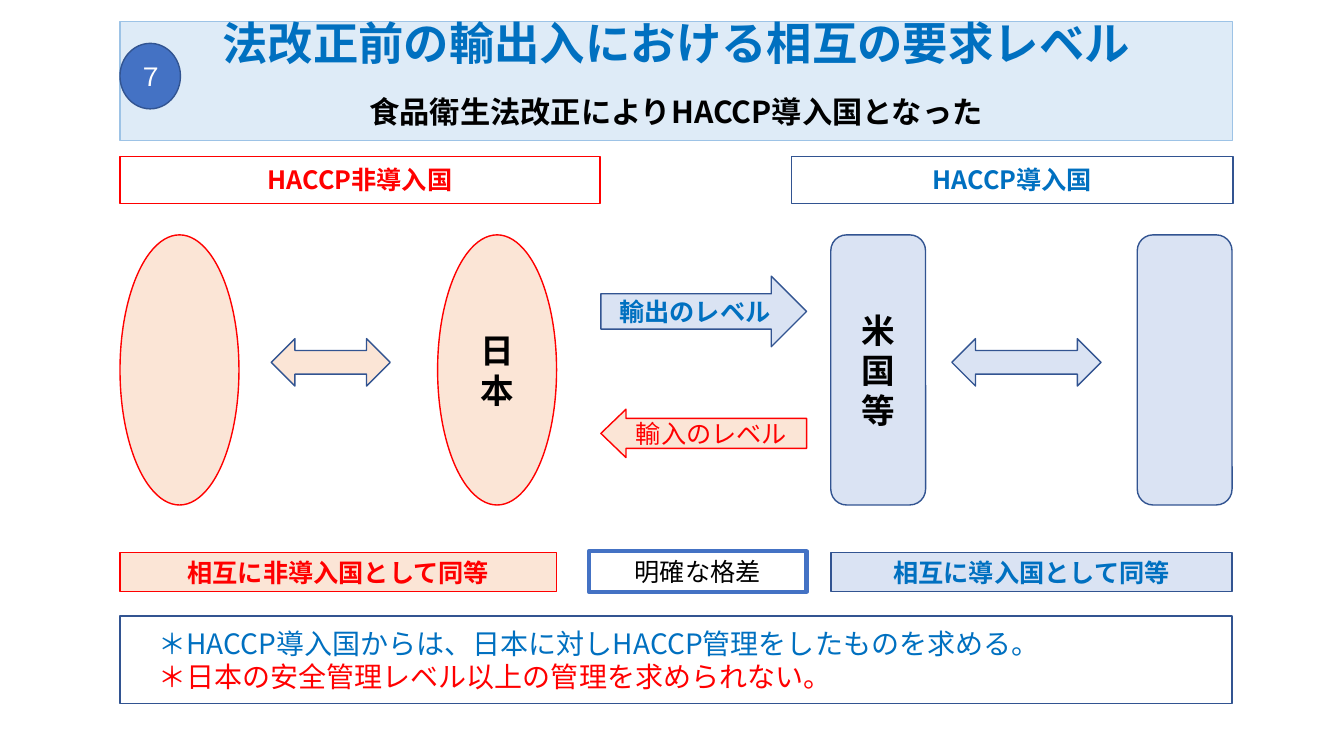
from lxml.etree import SubElement
from pptx import Presentation
from pptx.dml.color import RGBColor
from pptx.enum.shapes import MSO_SHAPE
from pptx.enum.text import MSO_ANCHOR, MSO_AUTO_SIZE, PP_ALIGN
from pptx.oxml.ns import qn
from pptx.util import Inches, Pt

FONT = "Noto Sans CJK JP"
RED = RGBColor(0xFF, 0x00, 0x00)
BLUE = RGBColor(0x00, 0x70, 0xC0)
NAVY = RGBColor(0x32, 0x54, 0x91)
ROYAL = RGBColor(0x44, 0x72, 0xC4)
SKY = RGBColor(0x9D, 0xC3, 0xE6)
PALE = RGBColor(0xDE, 0xEB, 0xF7)
ICE = RGBColor(0xDA, 0xE3, 0xF3)
PEACH = RGBColor(0xFB, 0xE5, 0xD6)
BLACK = RGBColor(0x00, 0x00, 0x00)
WHITE = RGBColor(0xFF, 0xFF, 0xFF)


def paint(shape, fill, line, width=1):
    """Set the fill and outline of a shape."""
    shape.fill.solid()
    shape.fill.fore_color.rgb = fill
    shape.line.color.rgb = line
    shape.line.width = Pt(width)


def write(shape, lines, align=PP_ALIGN.CENTER):
    """Write lines of (text, size, colour, bold), one paragraph each."""
    frame = shape.text_frame
    frame.word_wrap = True
    frame.auto_size = MSO_AUTO_SIZE.NONE
    frame.vertical_anchor = MSO_ANCHOR.MIDDLE
    frame.margin_top = frame.margin_bottom = 0
    for i, (text, size, color, bold) in enumerate(lines):
        para = frame.add_paragraph() if i else frame.paragraphs[0]
        para.alignment = align
        run = para.add_run()
        run.text = text
        font = run.font
        font.size, font.bold, font.name = Pt(size), bold, FONT
        font.color.rgb = color
        SubElement(run.font._element, qn("a:ea"), typeface=FONT)
    return frame


def draw(slide, kind, box, fill, line, lines=(), width=1):
    """Add a preset shape with centred text in a box."""
    shape = slide.shapes.add_shape(kind, *map(Inches, box))
    shape.shadow.inherit = False
    paint(shape, fill, line, width)
    if lines:
        write(shape, lines)
    return shape


def header(slide, x, y, w, h):
    """Place the title band and its number badge."""
    title = slide.shapes.title
    title.left, title.top, title.width, title.height = map(Inches, (x, y, w, h))
    paint(title, PALE, SKY, 0.75)
    frame = write(title, [
        ("法改正前の輸出入における相互の要求レベル", 32.4, BLUE, True),
        ("食品衛生法改正によりHACCP導入国となった", 21.6, BLACK, True)])
    frame.margin_bottom = Inches(0.1)
    for para in frame.paragraphs:
        para.line_spacing = 0.9
        para.space_before = Pt(0)
    para.space_before = Pt(19)
    draw(slide, MSO_SHAPE.OVAL, (x, y + 0.22, 0.6, 0.65), ROYAL, NAVY,
         [("７", 18, WHITE, False)])


def outside(slide, x, y):
    """Place the countries without HACCP."""
    draw(slide, MSO_SHAPE.RECTANGLE, (x, y, 4.76, 0.47), WHITE, RED,
         [("HACCP非導入国", 18, RED, True)])
    draw(slide, MSO_SHAPE.OVAL, (x, y + 0.78, 1.18, 2.68), PEACH, RED)
    draw(slide, MSO_SHAPE.OVAL, (x + 3.15, y + 0.78, 1.18, 2.68), PEACH, RED,
         [("日本", 24, BLACK, True)])
    draw(slide, MSO_SHAPE.LEFT_RIGHT_ARROW, (x + 1.5, y + 1.81, 1.18, 0.47),
         PEACH, NAVY)
    draw(slide, MSO_SHAPE.RECTANGLE, (x, y + 3.93, 4.33, 0.39), PEACH, RED,
         [("相互に非導入国として同等", 18, RED, True)])


def inside(slide, x, y):
    """Place the countries with HACCP."""
    draw(slide, MSO_SHAPE.RECTANGLE, (x - 0.39, y, 4.38, 0.47), WHITE, NAVY,
         [("HACCP導入国", 18, BLUE, True)])
    draw(slide, MSO_SHAPE.ROUNDED_RECTANGLE, (x, y + 0.78, 0.94, 2.68),
         ICE, NAVY, [("米国", 24, BLACK, True), ("等", 24, BLACK, True)])
    draw(slide, MSO_SHAPE.ROUNDED_RECTANGLE, (x + 3.04, y + 0.78, 0.94, 2.68),
         ICE, NAVY)
    draw(slide, MSO_SHAPE.LEFT_RIGHT_ARROW, (x + 1.2, y + 1.81, 1.48, 0.47),
         ICE, NAVY)
    draw(slide, MSO_SHAPE.RECTANGLE, (x, y + 3.93, 3.98, 0.39), ICE, NAVY,
         [("相互に導入国として同等", 18, BLUE, True)])


def trade(slide, x, y, w):
    """Place the trade arrows and the gap label between both sides."""
    draw(slide, MSO_SHAPE.RIGHT_ARROW, (x, y, w, 0.7), ICE, NAVY,
         [("輸出のレベル", 18, BLUE, True)])
    arrow = draw(slide, MSO_SHAPE.LEFT_ARROW, (x, y + 1.32, w, 0.48),
                 PEACH, RED, [("輸入のレベル", 18, RED, False)])
    arrow.adjustments[0] = 0.62
    arrow.adjustments[1] = 0.52
    draw(slide, MSO_SHAPE.RECTANGLE, (x - 0.12, y + 2.73, w + 0.12, 0.4),
         WHITE, ROYAL, [("明確な格差", 18, BLACK, False)], 3)


def notes(slide, x, y, w, h):
    """Place the framed remarks."""
    panel = draw(slide, MSO_SHAPE.RECTANGLE, (x, y, w, h), WHITE, NAVY)
    frame = write(panel, [
        ("＊HACCP導入国からは、日本に対しHACCP管理をしたものを求める。",
         20, BLUE, False),
        ("＊日本の安全管理レベル以上の管理を求められない。", 20, RED, False)],
        PP_ALIGN.LEFT)
    frame.margin_left = Inches(0.38)


def main():
    """Build and save the slide."""
    deck = Presentation()
    deck.slide_width, deck.slide_height = Inches(13.33), Inches(7.5)
    slide = deck.slides.add_slide(deck.slide_layouts[5])
    header(slide, 1.19, 0.21, 11.03, 1.18)
    outside(slide, 1.19, 1.55)
    inside(slide, 8.24, 1.55)
    trade(slide, 5.96, 2.74, 2.04)
    notes(slide, 1.19, 6.11, 11.03, 0.87)
    deck.save("out.pptx")


if __name__ == "__main__":
    main()
